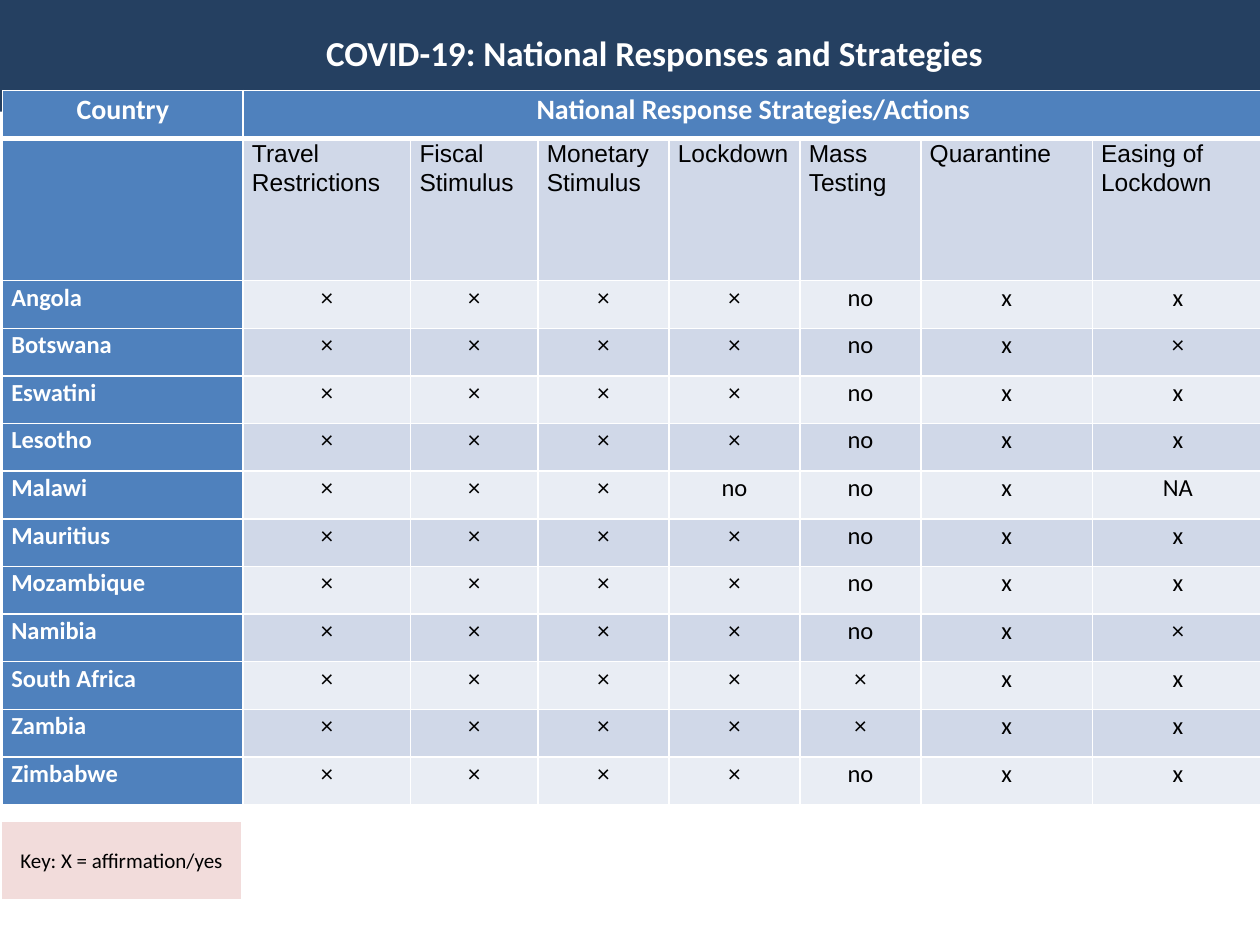
from lxml import etree
from pptx import Presentation
from pptx.dml.color import RGBColor
from pptx.enum import shapes, text
from pptx.oxml import parse_xml
from pptx.util import Inches, Pt

NS = 'xmlns:a="http://schemas.openxmlformats.org/drawingml/2006/main"'
HUES = {"navy": "254061", "blue": "4F81BD", "band": "D0D8E8", "pale": "E9EDF4",
        "pink": "F2DCDB", "white": "FFFFFF", "black": "000000"}
MID, LEFT = text.PP_ALIGN.CENTER, text.PP_ALIGN.LEFT


def paint(fill, hue):
    fill.solid()
    fill.fore_color.rgb = RGBColor.from_string(HUES[hue])


def write(frame, words, size, hue, bold=False, name="Calibri", align=MID, pad=(0.07, 0), gap=None):
    edges = {"margin_left": pad[0], "margin_right": pad[0],
             "margin_top": pad[1], "margin_bottom": pad[1]}
    for key, val in edges.items():
        setattr(frame, key, Inches(val))
    frame.text = words
    para = frame.paragraphs[0]
    para.alignment, para.line_spacing = align, gap
    font = para.runs[0].font
    for key, val in {"size": Pt(size), "bold": bold, "name": name}.items():
        setattr(font, key, val)
    font.color.rgb = RGBColor.from_string(HUES[hue])


deck = Presentation()
deck.slide_width, deck.slide_height = Inches(10), Inches(7.5)
slide = deck.slides.add_slide(deck.slide_layouts[5])

# Title banner
title = slide.shapes.title
box = {"left": 0, "top": 0.12, "width": 10, "height": 0.6}
for key, val in box.items():
    setattr(title, key, Inches(val))
title.element.spPr.append(parse_xml(f'<a:prstGeom {NS} prst="roundRect"><a:avLst/></a:prstGeom>'))
paint(title.fill, "navy")
frame = title.text_frame
write(frame, "COVID-19: National Responses and Strategies", 20, "white", True, pad=(0.1, 0.1))
frame.vertical_anchor = text.MSO_ANCHOR.MIDDLE
frame.word_wrap = True
frame.auto_size = text.MSO_AUTO_SIZE.SHAPE_TO_FIT_TEXT
indent = frame.paragraphs[0]._p.get_or_add_pPr()
indent.set("marL", str(Inches(0.39)))
indent.set("indent", "0")

# Table content
HEADS = ["Country", "National Response Strategies/Actions"]
ACTS = ["", "Travel Restrictions", "Fiscal Stimulus", "Monetary Stimulus", "Lockdown",
        "Mass Testing", "Quarantine", "Easing of Lockdown"]
MARKS = {
    "Angola": "×  × × × no x x",
    "Botswana": "× × × × no x ×",
    "Eswatini": "× × × × no x x",
    "Lesotho": "× × × × no x x",
    "Malawi": "× × × no no x NA",
    "Mauritius": "× × × × no x x",
    "Mozambique": "× × × × no x x",
    "Namibia": "× × × × no x ×",
    "South Africa": "× × × × × x x",
    "Zambia": "× × × × × x x",
    "Zimbabwe": "× × × × no x x",
}
rows = [HEADS + [""] * 6, ACTS]
rows += [[land] + marks.split() for land, marks in MARKS.items()]

# Table grid
WIDTHS = [1.91, 1.33, 1.01, 1.04, 1.04, 0.96, 1.36, 1.36]
HIGH, TALL = 5.67, 1.13
grid = slide.shapes.add_table(len(rows), len(WIDTHS), Inches(0.02), Inches(0.72),
                              Inches(10), Inches(HIGH)).table
grid.first_col = True
for col, wide in zip(grid.columns, WIDTHS):
    col.width = Inches(wide)
for row in grid.rows:
    row.height = Inches((HIGH - TALL) / (len(rows) - 1))
grid.rows[1].height = Inches(TALL)
grid.cell(0, 1).merge(grid.cell(0, 7))

# Table cells
for r, row in enumerate(rows):
    for c, words in enumerate(row):
        cell = grid.cell(r, c)
        props = cell._tc.get_or_add_tcPr()
        for side in "LRTB":
            thick = 3 if (r, side) in ((0, "B"), (1, "T")) else 1
            props.append(etree.fromstring(
                f'<a:ln{side} {NS} w="{Pt(thick)}"><a:solidFill>'
                f'<a:srgbClr val="{HUES["white"]}"/></a:solidFill></a:ln{side}>'))
        label = r == 0 or c == 0
        paint(cell.fill, "blue" if label else "band" if r % 2 else "pale")
        if not words:
            continue
        style = {"size": 14, "hue": "white" if label else "black", "bold": label}
        if r == 0:
            style["size"] = 16
        elif r == 1:
            style.update(name="Arial", align=LEFT)
        elif c == 0:
            style["align"] = LEFT
        write(cell.text_frame, words, gap=1.07, **style)
        cell.margin_left = cell.margin_right = Inches(0.07)
        cell.margin_top = cell.margin_bottom = 0

# Key
key = slide.shapes.add_shape(shapes.MSO_SHAPE.ROUNDED_RECTANGLE, Inches(0), Inches(6.51),
                             Inches(1.93), Inches(0.64))
key.adjustments[0] = 0
key.shadow.inherit = False
paint(key.fill, "pink")
paint(key.line.fill, "white")
key.line.width = Pt(2)
write(key.text_frame, "Key: X = affirmation/yes", 12, "black", pad=(0.05, 0.05))
key.text_frame.vertical_anchor = text.MSO_ANCHOR.MIDDLE
key.text_frame.word_wrap = True

deck.save("out.pptx")
